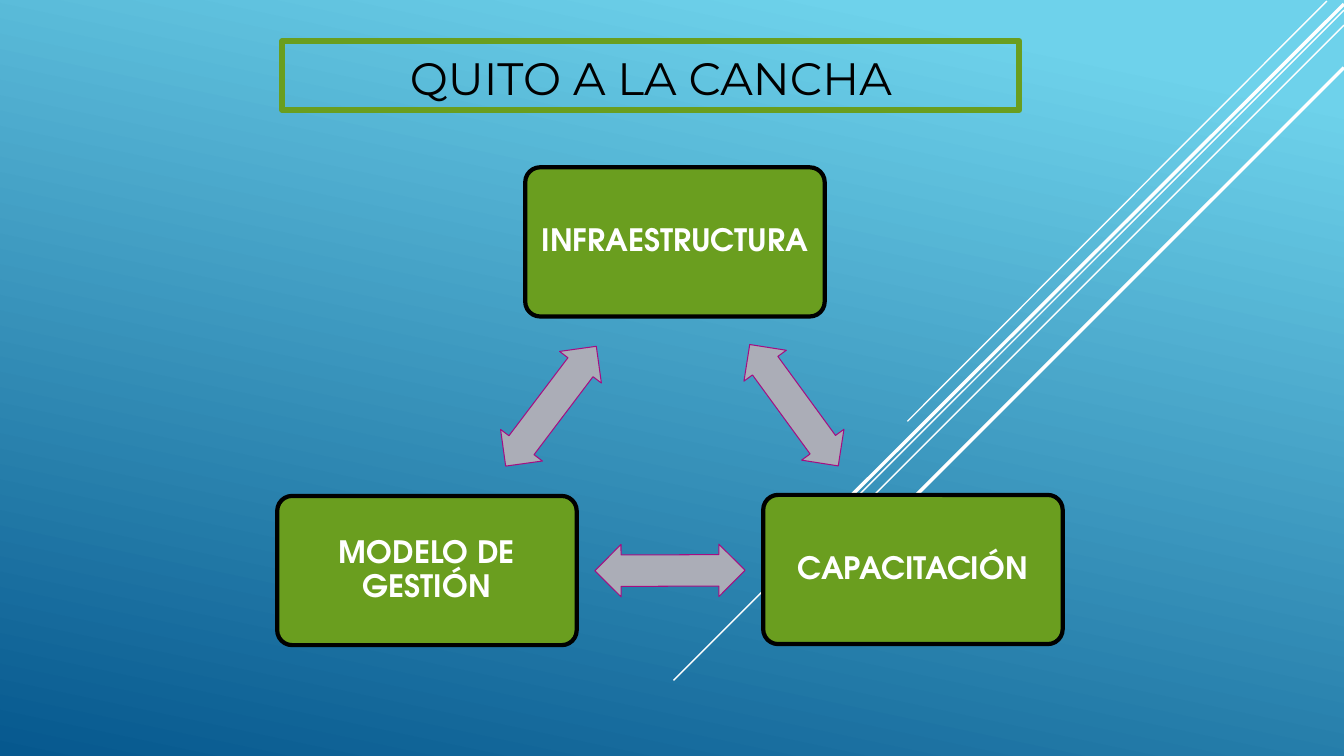
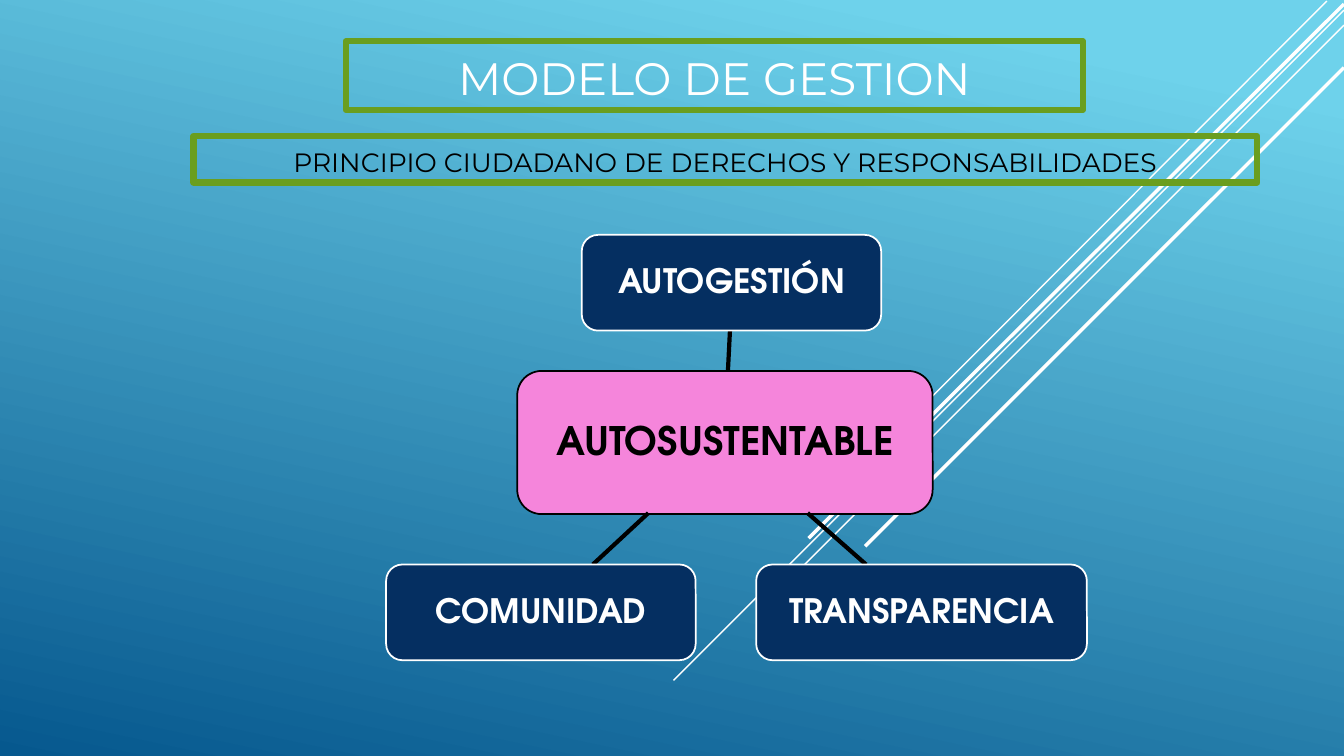
from lxml.etree import SubElement
from pptx import Presentation
from pptx.dml.color import RGBColor
from pptx.enum.shapes import MSO_CONNECTOR, MSO_SHAPE
from pptx.enum.text import MSO_ANCHOR, PP_ALIGN
from pptx.oxml.ns import qn
from pptx.util import Inches, Pt

SKY = RGBColor(0x6E, 0xD2, 0xEB)
DEEP_BLUE = RGBColor(0x06, 0x58, 0x8E)
NAVY = RGBColor(0x05, 0x2F, 0x61)
GREEN = RGBColor(0x6A, 0x9E, 0x1F)
PINK = RGBColor(0xF5, 0x85, 0xDB)
GREY = RGBColor(0xAB, 0xAD, 0xB7)
MAGENTA = RGBColor(0xA5, 0x0E, 0x82)
BLACK = RGBColor(0, 0, 0)
WHITE = RGBColor(0xFF, 0xFF, 0xFF)

TITLE_FONT = "Montserrat"
NODE_FONT = "TeX Gyre Adventor"

# Start, end and width of the diagonal rays behind every slide
RAYS = [
    ((13.16, 0.01), (9, 4.18), 1),
    ((13.33, 0.1), (6.68, 6.75), 1),
    ((13.33, 0.25), (7.91, 5.67), 1),
    ((13.33, 0.04), (8.02, 5.34), 2.5),
    ((13.33, 0.67), (8.58, 5.42), 2.5),
]


def write_text(shape, text, *, size, font, color, bold=False,
               anchor=MSO_ANCHOR.MIDDLE, inset=(0.1, 0.05), spacing=None):
    frame = shape.text_frame
    frame.word_wrap = True
    frame.vertical_anchor = anchor
    frame.margin_left = frame.margin_right = Inches(inset[0])
    frame.margin_top = frame.margin_bottom = Inches(inset[1])
    paragraph = frame.paragraphs[0]
    paragraph.alignment = PP_ALIGN.CENTER
    paragraph.line_spacing = spacing
    run = paragraph.add_run()
    run.text = text
    run.font.size = Pt(size)
    run.font.name = font
    run.font.bold = bold
    run.font.color.rgb = color


class Deck:
    """Holds the shared style and the slide being drawn."""

    def __init__(self):
        self.presentation = Presentation()
        self.presentation.slide_width = Inches(13.33)
        self.presentation.slide_height = Inches(7.5)
        self.slide = None
        fill = self.presentation.slide_master.background.fill
        fill.gradient()
        fill.gradient_angle = 258
        stops = zip(fill.gradient_stops, (0.1, 1), (SKY, DEEP_BLUE))
        for stop, position, color in stops:
            stop.position = position
            stop.color.rgb = color

    def add_slide(self):
        blank = self.presentation.slide_layouts[6]
        self.slide = self.presentation.slides.add_slide(blank)
        for start, end, width in RAYS:
            self.line(start, end, WHITE, width)

    def line(self, start, end, color, width):
        connector = self.slide.shapes.add_connector(
            MSO_CONNECTOR.STRAIGHT, *map(Inches, start + end))
        connector.line.color.rgb = color
        connector.line.width = Pt(width)
        SubElement(connector._element.spPr, qn("a:effectLst"))

    def shape(self, kind, box, fill, line, width):
        shape = self.slide.shapes.add_shape(kind, *map(Inches, box))
        shape.shadow.inherit = False
        if fill is None:
            shape.fill.background()
        else:
            shape.fill.solid()
            shape.fill.fore_color.rgb = fill
        shape.line.color.rgb = line
        shape.line.width = Pt(width)
        return shape

    def heading(self, text, box, size=32.4, color=BLACK):
        frame = self.shape(MSO_SHAPE.RECTANGLE, box, None, GREEN, 4.5)
        write_text(frame, text, size=size, font=TITLE_FONT, color=color,
                   anchor=MSO_ANCHOR.BOTTOM)

    def node(self, text, box, *, size, inset, fill=NAVY, line=WHITE,
             width=1.25, color=WHITE, corner=0.17):
        node = self.shape(MSO_SHAPE.ROUNDED_RECTANGLE, box, fill, line, width)
        node.adjustments[0] = corner
        write_text(node, text, size=size, font=NODE_FONT, color=color,
                   bold=True, inset=(inset, inset), spacing=0.9)

    def double_arrow(self, left, top, rotation):
        arrow = self.shape(MSO_SHAPE.LEFT_RIGHT_ARROW,
                           (left, top, 1.49, 0.52), GREY, MAGENTA, 0.75)
        arrow.adjustments[0] = 0.6
        arrow.adjustments[1] = 0.5
        arrow.rotation = rotation


def add_pillars_slide(deck):
    deck.add_slide()
    pillars = [
        ("INFRAESTRUCTURA", 5.21, 1.66),
        ("CAPACITACIÓN", 7.57, 4.91),
        ("MODELO DE GESTIÓN", 2.75, 4.92),
    ]
    for text, left, top in pillars:
        deck.node(text, (left, top, 2.97, 1.48), size=22, inset=0.09,
                  fill=GREEN, line=BLACK, width=3, corner=0.1)
    for arrow in [(7.13, 3.76, 53.9), (5.9, 5.4, 179.8), (4.72, 3.77, 307.1)]:
        deck.double_arrow(*arrow)
    deck.heading("QUITO A LA CANCHA", (2.8, 0.41, 7.31, 0.68))


def add_model_slide(deck):
    deck.add_slide()
    deck.heading("MODELO DE GESTION", (3.43, 0.41, 7.31, 0.68), color=WHITE)
    deck.heading("PRINCIPIO CIUDADANO DE DERECHOS Y RESPONSABILIDADES",
                 (1.92, 1.35, 10.55, 0.46), size=18.9)
    deck.node("AUTOSUSTENTABLE", (5.13, 3.68, 4.12, 1.42), size=28,
              inset=0.08, fill=PINK, line=BLACK, color=BLACK)
    branches = [
        ("AUTOGESTIÓN", 5.77, 2.33, 2.97, (7.22, 3.68), (7.24, 3.28)),
        ("TRANSPARENCIA", 7.5, 5.6, 3.28, (8.01, 5.09), (8.59, 5.6)),
        ("COMUNIDAD", 3.83, 5.6, 3.07, (6.43, 5.09), (5.88, 5.6)),
    ]
    for text, left, top, width, start, end in branches:
        deck.line(start, end, BLACK, 3)
        deck.node(text, (left, top, width, 0.95), size=24, inset=0.07)


def main():
    deck = Deck()
    add_pillars_slide(deck)
    add_model_slide(deck)
    deck.presentation.save("out.pptx")


if __name__ == "__main__":
    main()
